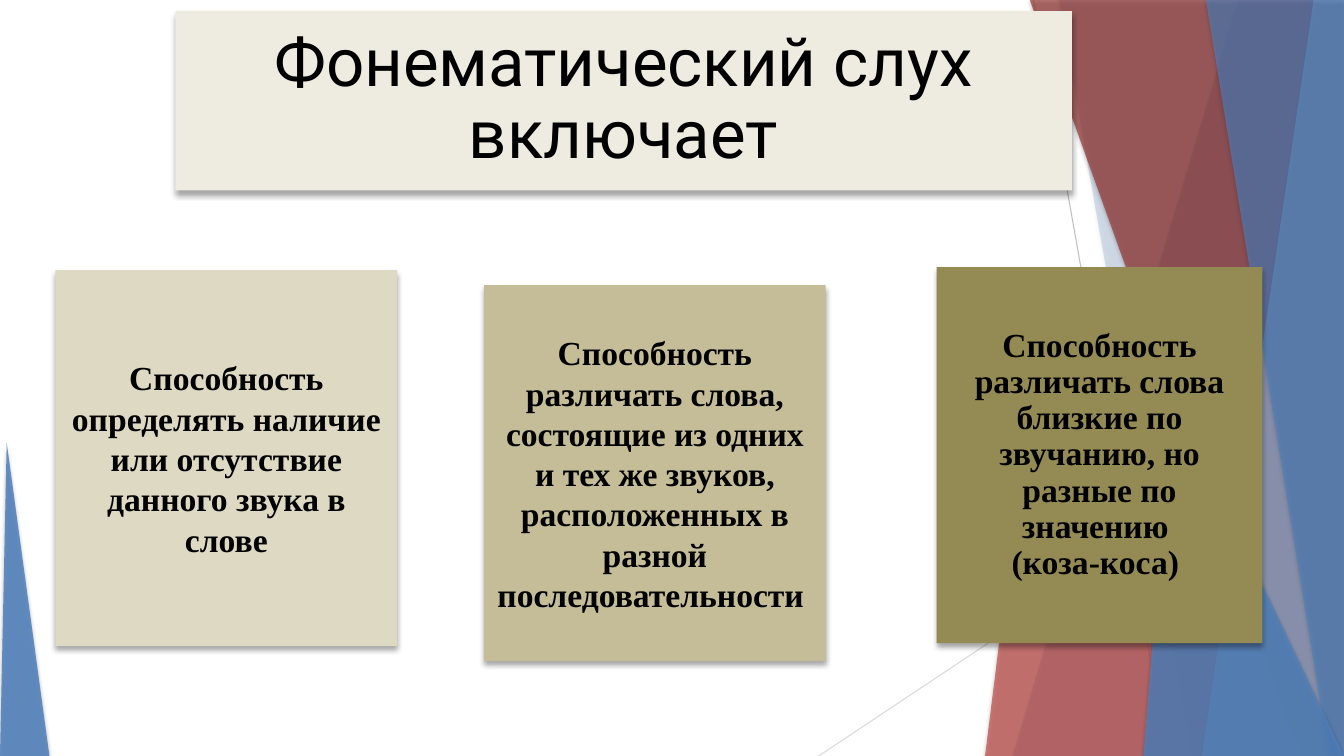
import pptx
import pptx.util
import pptx.dml.color
import pptx.enum.shapes
import pptx.enum.text
import pptx.oxml
import pptx.oxml.ns

WIDE, HIGH = 13.33, 7.5
BLUE = "4F81BD"
KIND = pptx.enum.shapes.MSO_SHAPE
inch = pptx.util.Inches
qn = pptx.oxml.ns.qn


def paint(color, tint):
    color.rgb = pptx.dml.color.RGBColor.from_string(tint)


def shade(shape, blur, dist):
    """Soft shadow straight below the shape."""
    shape.shadow.inherit = False
    glow = pptx.oxml.parse_xml(
        f'<a:outerShdw {pptx.oxml.ns.nsdecls("a")} blurRad="{blur * 12700}" '
        f'dist="{dist * 12700}" dir="5400000" rotWithShape="0">'
        '<a:srgbClr val="000000"><a:alpha val="35000"/></a:srgbClr></a:outerShdw>')
    shape._element.spPr.find(qn("a:effectLst")).append(glow)


def fill(shape, tint, alpha=100, blur=3, dist=2):
    shape.fill.solid()
    paint(shape.fill.fore_color, tint)
    if alpha < 100:
        color = shape._element.spPr.find(qn("a:solidFill"))[0]
        color.makeelement(qn("a:alpha"))
        pptx.oxml.ns  # namespace helpers
        node = color.makeelement(qn("a:alpha"), {"val": str(alpha * 1000)})
        color.append(node)
    shape.line.fill.background()
    shade(shape, blur, dist)


def write(shape, lines, font, size, bold, inset, gap):
    frame = shape.text_frame
    frame.word_wrap = True
    frame.auto_size = pptx.enum.text.MSO_AUTO_SIZE.NONE
    frame.vertical_anchor = pptx.enum.text.MSO_ANCHOR.MIDDLE
    frame.margin_left = frame.margin_right = inch(inset)
    frame.margin_top = frame.margin_bottom = inch(inset)
    frame.text = "\n".join(lines)
    for para in frame.paragraphs:
        para.alignment = pptx.enum.text.PP_ALIGN.CENTER
        para.line_spacing = gap
        for run in para.runs:
            run.font.name = font
            run.font.size = pptx.util.Pt(size)
            run.font.bold = bold
            paint(run.font.color, "000000")


def thread(slide, start, end, tint):
    """Thin straight line of the backdrop."""
    line = slide.shapes.add_connector(
        pptx.enum.shapes.MSO_CONNECTOR.STRAIGHT, *map(inch, start + end))
    line.line.width = pptx.util.Pt(0.75)
    paint(line.line.color, tint)
    prop = line._element.spPr
    prop.append(prop.makeelement(qn("a:effectLst")))


def band(slide, top, foot, tint, alpha):
    """Facet from a slanted left edge to the right side of the slide."""
    lift = -0.01
    pen = slide.shapes.build_freeform(inch(top), inch(lift))
    pen.add_line_segments([(inch(x), inch(y)) for x, y in
                           ((WIDE, lift), (WIDE, HIGH), (foot, HIGH))])
    fill(pen.convert_to_shape(), tint, alpha)


def spike(slide, left, top, width, peak, tint, alpha):
    """Triangle that stands on the slide's foot."""
    shape = slide.shapes.add_shape(
        KIND.ISOSCELES_TRIANGLE, *map(inch, (left, top, width, HIGH - top)))
    shape.adjustments[0] = peak
    fill(shape, tint, alpha)


def scene(slide):
    thread(slide, (10.25, 0), (11.58, HIGH), "BFBFBF")
    thread(slide, (WIDE, 4.03), (8.12, HIGH), "D9D9D9")
    band(slide, 12.28, 10.04, BLUE, 30)
    band(slide, 10.5, 11.82, BLUE, 20)
    spike(slide, 9.77, 3.33, 3.56, 0.146, "C0504D", 72)
    band(slide, 10.21, 12.91, "953735", 70)
    band(slide, 13.03, 11.92, "95B3D7", 70)
    band(slide, 11.96, 13.18, BLUE, 65)
    spike(slide, 11.34, 3.93, 1.99, 0.146, BLUE, 80)
    spike(slide, 0, 4.39, 0.49, 0.136, BLUE, 85)


def head(slide, box, text):
    title = slide.shapes.title
    title.left, title.top, title.width, title.height = map(inch, box)
    fill(title, "EEECE1", blur=4, dist=3)
    write(title, [text], "Roboto", 48, False, 0.2, 0.9)
    slide.shapes._spTree.append(title._element)  # above the backdrop


def card(slide, box, tint, lines, gap):
    shape = slide.shapes.add_shape(KIND.RECTANGLE, *map(inch, box))
    fill(shape, tint, blur=4, dist=3)
    write(shape, lines, "Times New Roman", 24, True, 0.1, gap)


# Left, top, width, tint, line spacing, text
CARDS = [
    (0.55, 2.68, 3.39, "DDD9C3", 1.0,
     ["Способность определять наличие или отсутствие данного звука в слове"]),
    (4.8, 2.83, 3.39, "C4BD97", 1.0,
     ["Способность различать слова, состоящие из одних и тех же звуков, "
      "расположенных в разной последовательности "]),
    (9.29, 2.65, 3.23, "948A54", 0.9,
     ["Способность различать слова близкие по звучанию, но разные по значению ",
      "(коза-коса) "]),
]


def main():
    deck = pptx.Presentation()
    deck.slide_width, deck.slide_height = inch(WIDE), inch(HIGH)
    slide = deck.slides.add_slide(deck.slide_layouts[5])
    scene(slide)
    head(slide, (1.74, 0.11, 8.89, 1.78), "Фонематический слух включает")
    for left, top, width, tint, gap, lines in CARDS:
        card(slide, (left, top, width, 3.73), tint, lines, gap)
    deck.save("out.pptx")


if __name__ == "__main__":
    main()
